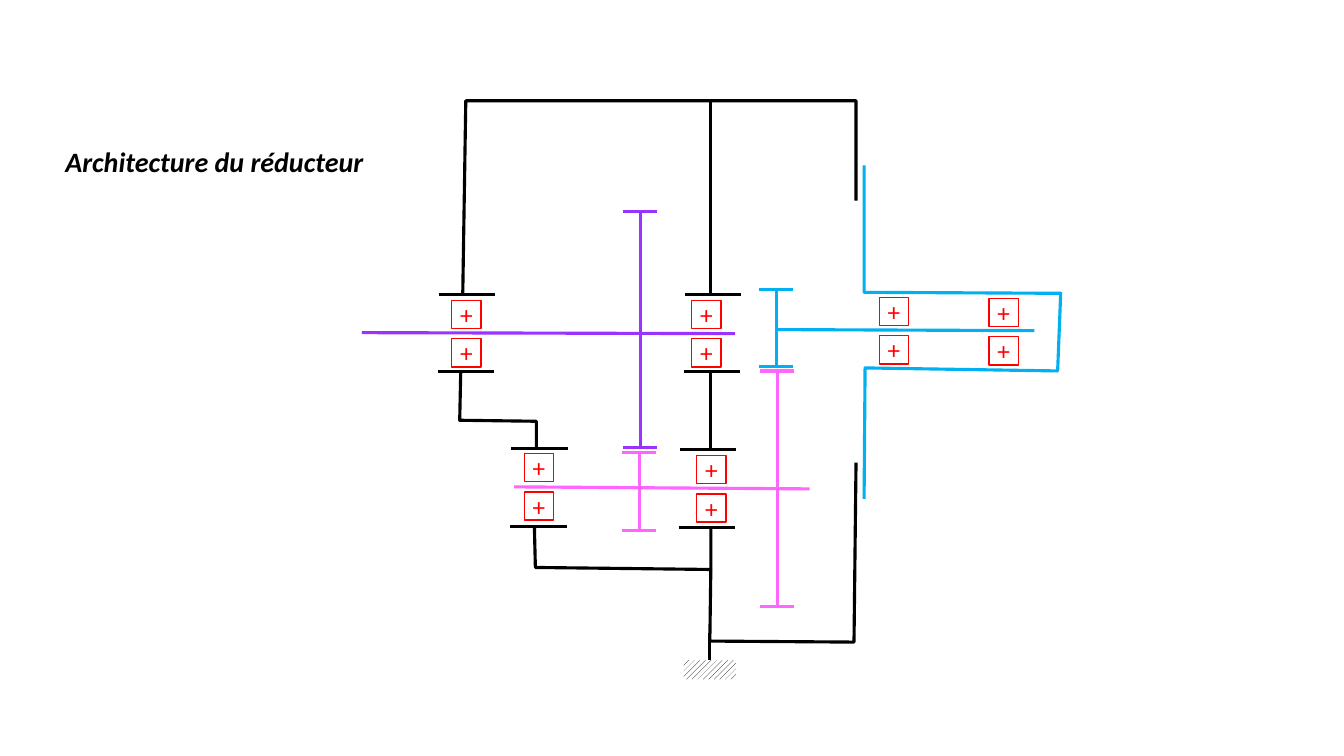
"""Builds a slide with the kinematic diagram of a gear reducer."""
from lxml.etree import SubElement
from pptx import Presentation
from pptx.dml.color import RGBColor
from pptx.enum.dml import MSO_PATTERN
from pptx.enum.shapes import MSO_CONNECTOR, MSO_SHAPE
from pptx.enum.text import MSO_ANCHOR, MSO_AUTO_SIZE, PP_ALIGN
from pptx.oxml.ns import qn
from pptx.util import Inches, Pt

BLACK, WHITE, RED = "000000", "FFFFFF", "FF0000"
BLUE, PINK, PURPLE = "00B0F0", "FF66FF", "9933FF"
STROKE = 2.25


def color(value):
    """Turn a hex string into a colour."""
    return RGBColor.from_string(value)


def set_line(shape, value, width=STROKE):
    """Set the colour and width of an outline."""
    shape.line.color.rgb = color(value)
    shape.line.width = Pt(width)


def write(shape, text, size=18, value=BLACK, bold=False, italic=False,
          align=PP_ALIGN.LEFT):
    """Write one formatted paragraph in a shape."""
    para = shape.text_frame.paragraphs[0]
    para.alignment = align
    span = para.add_run()
    span.text = text
    span.font.name = "Calibri"
    span.font.size = Pt(size)
    span.font.bold = bold
    span.font.italic = italic
    span.font.color.rgb = color(value)


def add_line(page, start, end, value):
    """Draw a straight line between two points."""
    line = page.shapes.add_connector(
        MSO_CONNECTOR.STRAIGHT, *map(Inches, (*start, *end)))
    set_line(line, value)
    SubElement(line._element.spPr, qn("a:effectLst"))
    return line


def add_outline(page, left, top, points, value=BLACK):
    """Draw an open polyline whose points are relative to left and top."""
    corners = [(Inches(left + x), Inches(top + y)) for x, y in points]
    builder = page.shapes.build_freeform(*corners[0])
    builder.add_line_segments(corners[1:], close=False)
    outline = builder.convert_to_shape()
    outline.fill.background()
    outline.shadow.inherit = False
    set_line(outline, value)


def add_gear(page, center, top, height, value):
    """Draw a gear as a web with a rim at both ends."""
    bottom = top + height
    add_line(page, (center, top), (center, bottom), value)
    for rim in (top, bottom):
        add_line(page, (center - 0.17, rim), (center + 0.17, rim), value)


def add_bearing(page, left, top):
    """Draw a bearing as two boxes, above and below its shaft."""
    for box_top in (top, top + 0.38):
        box = page.shapes.add_shape(
            MSO_SHAPE.RECTANGLE, Inches(left), Inches(box_top),
            Inches(0.29), Inches(0.28))
        box.shadow.inherit = False
        box.fill.solid()
        box.fill.fore_color.rgb = color(WHITE)
        set_line(box, RED, 1)
        frame = box.text_frame
        frame.margin_left = frame.margin_right = 0
        frame.margin_top = frame.margin_bottom = 0
        frame.word_wrap = False
        frame.vertical_anchor = MSO_ANCHOR.MIDDLE
        write(box, "+", value=RED, align=PP_ALIGN.CENTER)


def add_seat(page, left, top):
    """Draw the two housing faces that hold a bearing."""
    for x, y in ((left, top), (left - 0.01, top + 0.77)):
        add_line(page, (x, y), (x + 0.56, y), BLACK)


def add_housing(page, left, top):
    """Draw the fixed housing from its top left corner."""
    add_outline(page, left, top, [(3.93, 0.99), (3.93, 0), (0.06, 0), (0.03, 1.91)])
    add_outline(page, left, top, [(0.01, 2.7), (0, 3.17), (0.76, 3.18), (0.76, 3.46)])
    add_outline(page, left, top, [(0.74, 4.22), (0.75, 4.63), (2.49, 4.65), (2.49, 4.22)])
    wall = left + 2.49
    for start, end in ((3.44, 2.69), (1.91, 0)):
        add_line(page, (wall, top + start), (wall, top + end), BLACK)
    add_outline(page, left, top, [(2.49, 4.65), (2.48, 5.36), (3.91, 5.37), (3.93, 3.59)])


def add_ground(page, left, top):
    """Draw the hatched ground and the post that stands on it."""
    width = 0.52
    ground = page.shapes.add_shape(
        MSO_SHAPE.RECTANGLE, Inches(left), Inches(top), Inches(width), Inches(0.19))
    ground.shadow.inherit = False
    ground.fill.patterned()
    ground.fill.pattern = MSO_PATTERN.WIDE_UPWARD_DIAGONAL
    ground.fill.fore_color.rgb = color(BLACK)
    ground.fill.back_color.rgb = color(WHITE)
    ground.line.fill.background()
    middle = left + width / 2
    post = add_line(page, (middle, top), (middle, top - 0.27), BLACK)
    post.begin_connect(ground, 0)


def add_title(page, left, top):
    """Write the title of the slide."""
    title = page.shapes.add_textbox(
        Inches(left), Inches(top), Inches(3.18), Inches(0.44))
    title.text_frame.word_wrap = False
    title.text_frame.auto_size = MSO_AUTO_SIZE.SHAPE_TO_FIT_TEXT
    write(title, "Architecture du réducteur", size=20, bold=True, italic=True)


def main():
    """Build and save the slide."""
    deck = Presentation()
    deck.slide_width, deck.slide_height = Inches(13.33), Inches(7.5)
    page = deck.slides.add_slide(deck.slide_layouts[6])

    for gear in ((7.7, 2.87, 0.77, BLUE), (6.34, 4.49, 0.77, PINK),
                 (7.71, 3.68, 2.34, PINK), (6.35, 2.1, 2.34, PURPLE)):
        add_gear(page, *gear)
    for shaft in (((7.7, 3.27), (10.26, 3.28), BLUE),
                  ((5.1, 4.83), (8.03, 4.85), PINK),
                  ((3.59, 3.3), (7.29, 3.31), PURPLE)):
        add_line(page, *shaft)
    for bearing in ((4.48, 2.98), (6.86, 2.98), (8.72, 2.95),
                    (9.81, 2.96), (5.2, 4.5), (6.91, 4.52)):
        add_bearing(page, *bearing)
    for seat in ((4.35, 2.92), (6.79, 2.92), (6.74, 4.46), (5.07, 4.45)):
        add_seat(page, *seat)

    add_housing(page, 4.56, 1)
    add_outline(page, 8.57, 1.64, [(0, 0), (0, 1.26), (1.95, 1.27), (1.92, 2.04),
                                   (0.01, 2.01), (0, 3.31)], BLUE)
    add_ground(page, 6.78, 6.55)
    add_title(page, 0.55, 1.38)
    deck.save("out.pptx")


if __name__ == "__main__":
    main()
